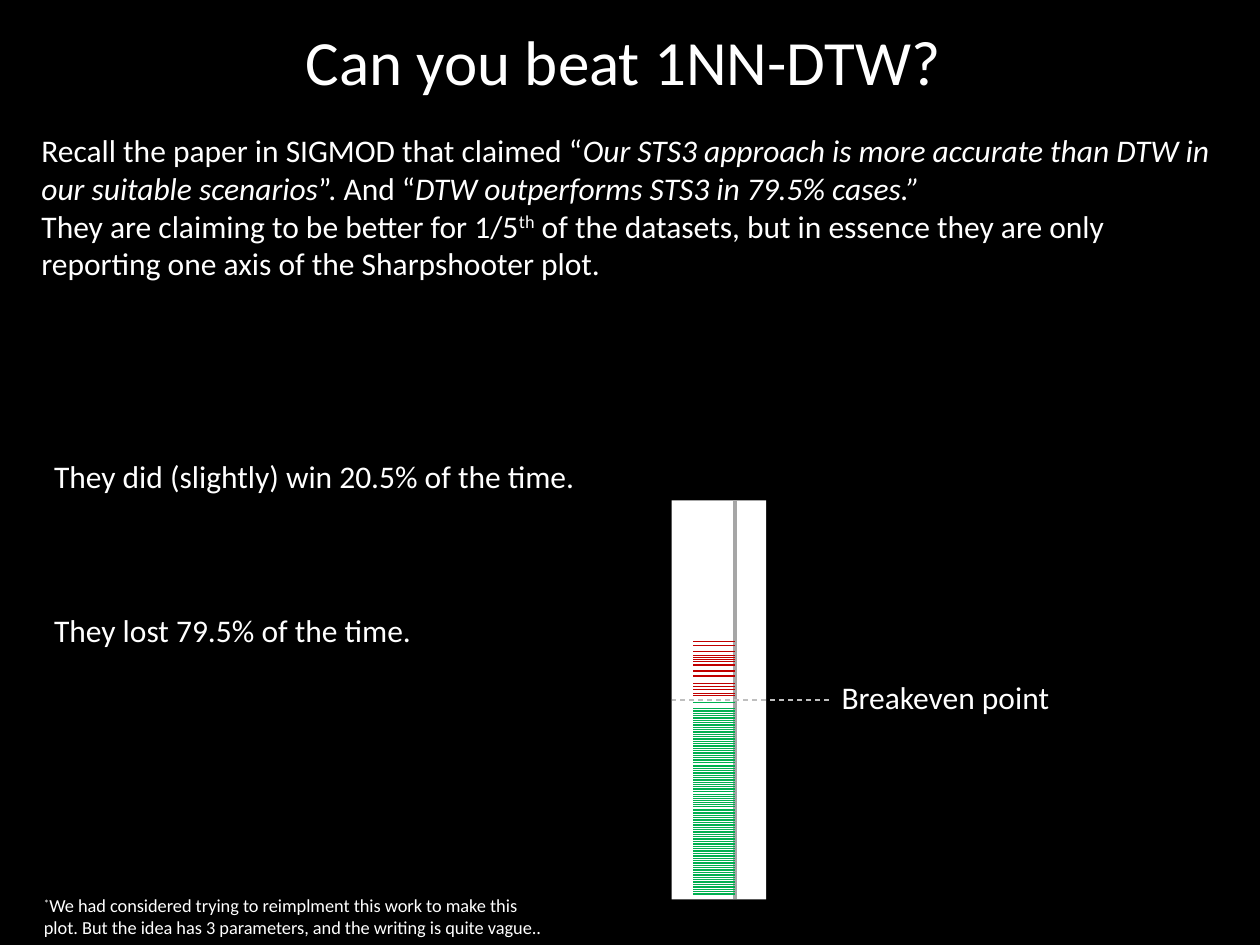
from dataclasses import dataclass

from lxml import etree
from pptx import Presentation
from pptx import util as u
from pptx.dml.color import RGBColor
from pptx.enum import dml, shapes, text
from pptx.oxml.ns import qn


@dataclass(frozen=True)
class Theme:
    font: str = "Calibri"
    background: str = "000000"
    ink: str = "FFFFFF"
    panel: str = "FFFFFF"
    axis: str = "A6A6A6"
    loss: str = "C00000"
    win: str = "00B050"
    guide: str = "BFBFBF"
    title_size: float = 36
    body_size: float = 18
    note_size: float = 10.5


@dataclass(frozen=True)
class Frame:
    left: float
    top: float
    width: float
    height: float


@dataclass(frozen=True)
class TickRun:
    first: float
    last: float
    count: int

    def heights(self) -> list[float]:
        step = (self.last - self.first) / (self.count - 1)
        return [self.first + step * index for index in range(self.count)]


THEME = Theme()
AXIS_X = 419.8
TICK_LEFT = 396
PANEL = Frame(383.8, 286, 54, 228)
MIDDLE = PANEL.top + PANEL.height / 2

LOSS_TICKS = [366.5, 368.6, 372.2, 374.4, 375.8, 376.6, 378, 379.4, 380.2,
              383, 383.8, 385.9, 386.6, 390.2, 392.4, 393.8, 396, 397.4]
FIRST_WIN_TICK = 401
WIN_RUNS = [
    TickRun(404.6, 435.6, 32),
    TickRun(437, 452.2, 16),
    TickRun(453.6, 462.2, 8),
    TickRun(463, 511.2, 50),
]


def add_box(page, frame: Frame, wrap: bool = True, anchor=text.MSO_ANCHOR.TOP):
    box = page.shapes.add_textbox(u.Pt(frame.left), u.Pt(frame.top),
                                  u.Pt(frame.width), u.Pt(frame.height))
    box.text_frame.word_wrap = wrap
    box.text_frame.vertical_anchor = anchor
    return box.text_frame


def add_para(box, align=text.PP_ALIGN.LEFT, before: float = 0):
    para = box.paragraphs[0]
    if para.runs:
        para = box.add_paragraph()
    para.alignment = align
    para.space_before = u.Pt(before)
    return para


def write(para, words: str, *, size: float = THEME.body_size,
          italic: bool = False, raised: bool = False) -> None:
    span = para.add_run()
    span.text = words
    span.font.name = THEME.font
    span.font.size = u.Pt(size)
    span.font.italic = italic
    span.font.color.rgb = RGBColor.from_string(THEME.ink)
    if raised:
        span.font._element.set("baseline", "30000")


def add_line(page, start: tuple[float, float], end: tuple[float, float],
             color: str, weight: float):
    line = page.shapes.add_connector(shapes.MSO_CONNECTOR.STRAIGHT,
                                     *map(u.Pt, start + end))
    line.line.color.rgb = RGBColor.from_string(color)
    line.line.width = u.Pt(weight)
    etree.SubElement(line._element.spPr, qn("a:effectLst"))
    return line


def add_ticks(page, heights: list[float], color: str) -> None:
    for height in heights:
        add_line(page, (AXIS_X, height), (TICK_LEFT, height), color, 0.25)


def add_panel(page):
    panel = page.shapes.add_shape(
        shapes.MSO_SHAPE.RECTANGLE, u.Pt(PANEL.left), u.Pt(PANEL.top),
        u.Pt(PANEL.width), u.Pt(PANEL.height))
    panel.shadow.inherit = False
    panel.fill.solid()
    panel.fill.fore_color.rgb = RGBColor.from_string(THEME.panel)
    panel.line.fill.background()
    return panel


def add_plot(page) -> None:
    panel = add_panel(page)
    bottom = PANEL.top + PANEL.height
    add_line(page, (AXIS_X, bottom), (AXIS_X, PANEL.top), THEME.axis, 2.25)
    add_ticks(page, LOSS_TICKS, THEME.loss)
    wins = [height for run in WIN_RUNS for height in run.heights()]
    add_ticks(page, [FIRST_WIN_TICK] + wins, THEME.win)
    guide = add_line(page, (473.8, MIDDLE), (PANEL.left, MIDDLE),
                     THEME.guide, 0.75)
    guide.line.dash_style = dml.MSO_LINE.DASH
    guide.end_connect(panel, 1)


def add_claims(page) -> None:
    box = add_box(page, Frame(16.6, 71.3, 692, 154.8))
    para = add_para(box)
    write(para, "Recall the paper in SIGMOD that claimed “")
    write(para, "Our STS3 approach is more accurate than DTW in our suitable "
                "scenarios", italic=True)
    write(para, "”. And “")
    write(para, "DTW outperforms STS3 in 79.5% cases.”", italic=True)
    para = add_para(box)
    write(para, "They are claiming to be better for 1/5")
    write(para, "th", raised=True)
    write(para, " of the datasets, but in essence they are only reporting "
                "one axis of the Sharpshooter plot.")

    box = add_box(page, Frame(23.8, 257.8, 324, 116.6))
    write(add_para(box), "They did (slightly) win 20.5% of the time.")
    write(add_para(box, before=66), "They lost 79.5% of the time.")


def add_notes(page) -> None:
    para = add_para(add_box(page, Frame(18, 507.6, 306, 32.4)))
    write(para, "*", size=THEME.note_size, raised=True)
    write(para, "We had considered trying to reimplment this work to make "
                "this plot. But the idea has 3 parameters, and the writing "
                "is quite vague..", size=THEME.note_size)
    label = add_box(page, Frame(473.8, 383.8, 134.6, 28.8), wrap=False)
    write(add_para(label), "Breakeven point")


def main() -> None:
    deck = Presentation()
    deck.slide_width, deck.slide_height = u.Pt(720), u.Pt(540)
    page = deck.slides.add_slide(deck.slide_layouts[6])
    page.background.fill.solid()
    page.background.fill.fore_color.rgb = RGBColor.from_string(THEME.background)

    add_claims(page)
    title = add_box(page, Frame(12.2, 0, 696.2, 69.1),
                    anchor=text.MSO_ANCHOR.MIDDLE)
    write(add_para(title, align=text.PP_ALIGN.CENTER),
          "Can you beat 1NN-DTW? ", size=THEME.title_size)
    add_plot(page)
    add_notes(page)
    deck.save("out.pptx")


if __name__ == "__main__":
    main()
